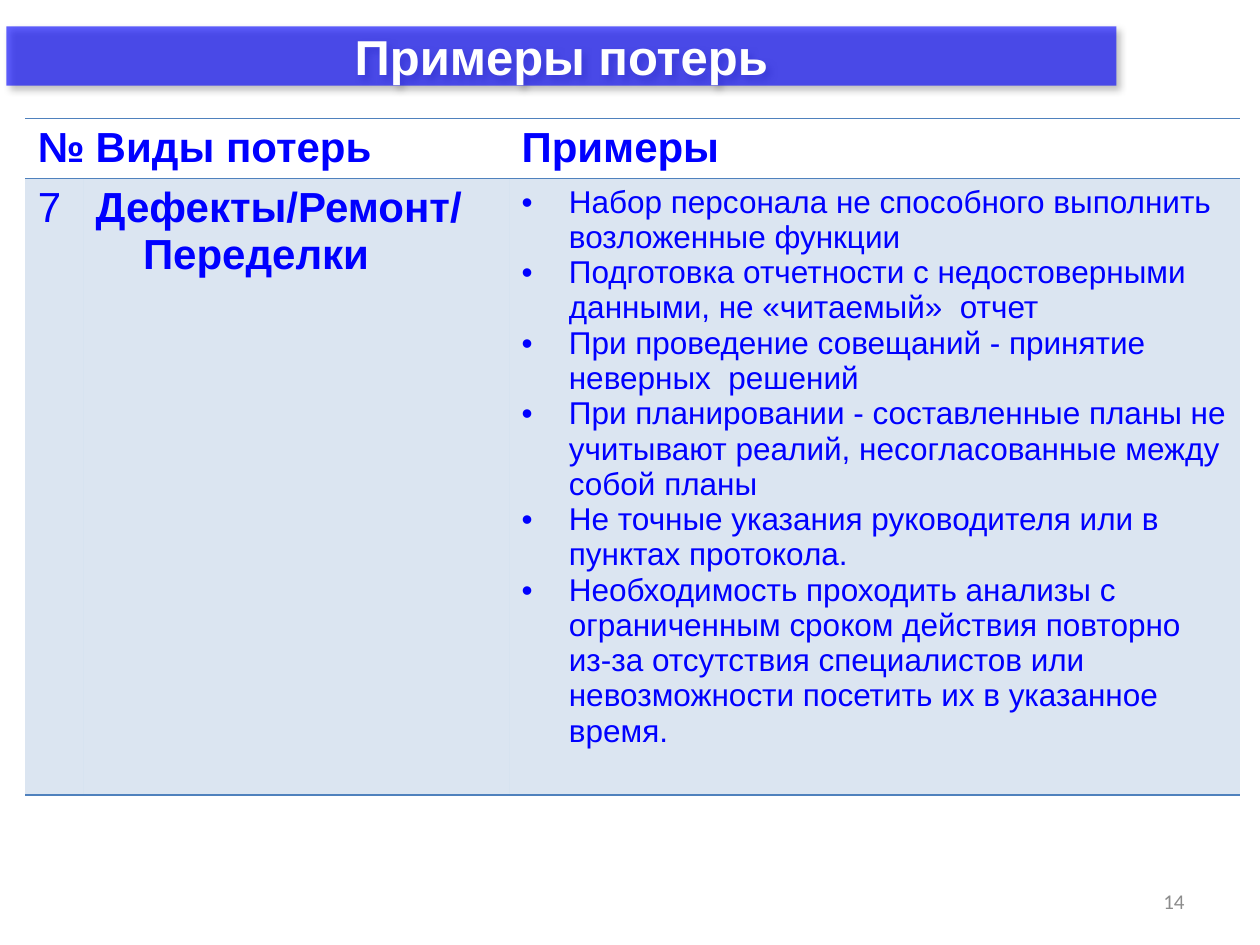
"""Build a slide with a title bar and a table of loss examples."""
from dataclasses import dataclass
from typing import Any

from lxml import etree
from pptx import Presentation
from pptx import util as u
from pptx.dml.color import RGBColor
from pptx.enum import text as t
from pptx.oxml import parse_xml
from pptx.oxml.ns import nsdecls, qn


@dataclass(frozen=True)
class Theme:
    ink: str = "0000FF"
    white: str = "FFFFFF"
    grey: str = "8C8C8C"
    line: str = "4F81BD"
    dark: str = "000000"
    face: str = "Arial"
    plain: str = "Calibri"
    title: int = 28
    head: int = 24
    body: int = 18
    foot: int = 12


@dataclass(frozen=True)
class Box:
    col: float
    row: float
    wide: float
    high: float


@dataclass(frozen=True)
class Entry:
    lines: tuple[str, ...]
    size: int
    bold: bool = False
    hang: bool = False
    mark: str = ""


LOOK = Theme()
COLS, ROWS = 100, 75
WIDE, HIGH = u.Inches(10), u.Inches(7.5)
BAR = Box(0.5, 2.1, 88.1, 4.7)
GRID = Box(2, 9.4, 96.4, 53.7)
PAGE = Box(71.7, 69.5, 23.3, 4)
WIDTHS = (4.6, 33.8, 58)
HEIGHTS = (4.75, 48.95)
HANG = 3.75
NO_STYLE = "{2D5ABB26-0587-4C30-8999-92F81FD0307C}"

CASES = (
    "Набор персонала не способного выполнить возложенные функции",
    "Подготовка отчетности с недостоверными данными, не «читаемый»  отчет",
    "При проведение совещаний - принятие неверных  решений",
    "При планировании - составленные планы не учитывают реалий, "
    "несогласованные между собой планы",
    "Не точные указания руководителя или в пунктах протокола.",
    "Необходимость проходить анализы с ограниченным сроком действия повторно "
    "из-за отсутствия специалистов или невозможности посетить их в указанное время.",
)
HEAD = tuple(Entry((name,), LOOK.head, True) for name in ("№", "Виды потерь", "Примеры"))
LOSS = (
    Entry(("7",), LOOK.head),
    Entry(("Дефекты/Ремонт/ Переделки",), LOOK.head, True, True),
    Entry(CASES, LOOK.body, False, True, "•"),
)


def across(cols: float) -> int:
    """Turn grid columns into a length."""
    return round(WIDE * cols / COLS)


def down(rows: float) -> int:
    """Turn grid rows into a length."""
    return round(HIGH * rows / ROWS)


def place(box: Box) -> tuple[int, int, int, int]:
    """Give the left, top, width and height of a box."""
    return across(box.col), down(box.row), across(box.wide), down(box.high)


def assign(item: Any, form: dict[str, Any]) -> None:
    """Set attributes from a dict of format values."""
    for key, value in form.items():
        setattr(item, key, value)


def style(para: Any, size: int, tint: str, face: str, bold: bool = False) -> None:
    """Format the font of a paragraph's runs."""
    for run in para.runs:
        assign(run.font, {"size": u.Pt(size), "name": face, "bold": bold})
        run.font.color.rgb = RGBColor.from_string(tint)


def tint(item: Any, shade: str, share: int) -> None:
    """Fill an item with a partly clear colour."""
    item.fill.solid()
    item.fill.fore_color.rgb = RGBColor.from_string(shade)
    clr = item.fill._xPr.find(qn("a:solidFill"))[0]
    etree.SubElement(clr, qn("a:alpha"), val=str(share * 1000))


def rule(cell: Any, sides: str) -> None:
    """Draw border lines on the named sides of a cell."""
    prop = cell._tc.get_or_add_tcPr()
    for spot, side in enumerate(sides):
        prop.insert(spot, parse_xml(
            f'<a:ln{side} {nsdecls("a")} w="{u.Pt(1)}"><a:solidFill>'
            f'<a:srgbClr val="{LOOK.line}"/></a:solidFill></a:ln{side}>'))


def write(cell: Any, entry: Entry) -> None:
    """Put the lines of an entry into a cell."""
    frame = cell.text_frame
    frame.text = "\n".join(entry.lines)
    for para in frame.paragraphs:
        prop = para._p.get_or_add_pPr()
        if entry.hang:
            prop.set("marL", str(across(HANG)))
            prop.set("indent", str(-across(HANG)))
        if entry.mark:
            etree.SubElement(prop, qn("a:buFont"), typeface=LOOK.face)
            etree.SubElement(prop, qn("a:buChar"), char=entry.mark)
        style(para, entry.size, LOOK.ink, LOOK.face, entry.bold)


def add_title(slide: Any, label: str) -> None:
    """Turn the title placeholder into a rounded bar with a shadow."""
    bar = slide.shapes.title
    assign(bar, dict(zip(("left", "top", "width", "height"), place(BAR))))
    prop = bar._element.spPr
    prop.append(parse_xml(
        f'<a:prstGeom {nsdecls("a")} prst="roundRect"><a:avLst/></a:prstGeom>'))
    tint(bar, LOOK.ink, 62)
    bar.line.fill.background()
    prop.append(parse_xml(
        f'<a:effectLst {nsdecls("a")}><a:outerShdw blurRad="{u.Pt(4)}" '
        f'dist="{u.Pt(3)}" dir="2700000" algn="tl" rotWithShape="0">'
        f'<a:srgbClr val="{LOOK.dark}"><a:alpha val="40000"/></a:srgbClr>'
        f'</a:outerShdw></a:effectLst>'))
    frame = bar.text_frame
    frame.text = label
    assign(frame, {"vertical_anchor": t.MSO_ANCHOR.MIDDLE, "word_wrap": True,
                   "auto_size": t.MSO_AUTO_SIZE.NONE})
    para = frame.paragraphs[0]
    para.alignment = t.PP_ALIGN.CENTER
    style(para, LOOK.title, LOOK.white, LOOK.face, True)


def add_grid(slide: Any, rows: tuple[tuple[Entry, ...], ...]) -> None:
    """Add the table of losses."""
    table = slide.shapes.add_table(len(rows), len(WIDTHS), *place(GRID)).table
    table._tbl.tblPr.find(qn("a:tableStyleId")).text = NO_STYLE
    table.horz_banding = False
    for col, wide in zip(table.columns, WIDTHS):
        col.width = across(wide)
    for row, high, items in zip(table.rows, HEIGHTS, rows):
        row.height = down(high)
        for cell, entry in zip(row.cells, items):
            write(cell, entry)
            if items is HEAD:
                cell.fill.background()
            else:
                tint(cell, LOOK.line, 20)
            rule(cell, "TB")


def add_page(slide: Any, label: str) -> None:
    """Add the page number."""
    frame = slide.shapes.add_textbox(*place(PAGE)).text_frame
    frame.text = label
    assign(frame, {"vertical_anchor": t.MSO_ANCHOR.MIDDLE, "word_wrap": True})
    para = frame.paragraphs[0]
    para.alignment = t.PP_ALIGN.RIGHT
    style(para, LOOK.foot, LOOK.grey, LOOK.plain)


def main() -> None:
    """Build and save the slide."""
    deck = Presentation()
    assign(deck, {"slide_width": WIDE, "slide_height": HIGH})
    slide = deck.slides.add_slide(deck.slide_layouts[5])
    add_title(slide, "Примеры потерь")
    add_grid(slide, (HEAD, LOSS))
    add_page(slide, "14")
    deck.save("out.pptx")


if __name__ == "__main__":
    main()
